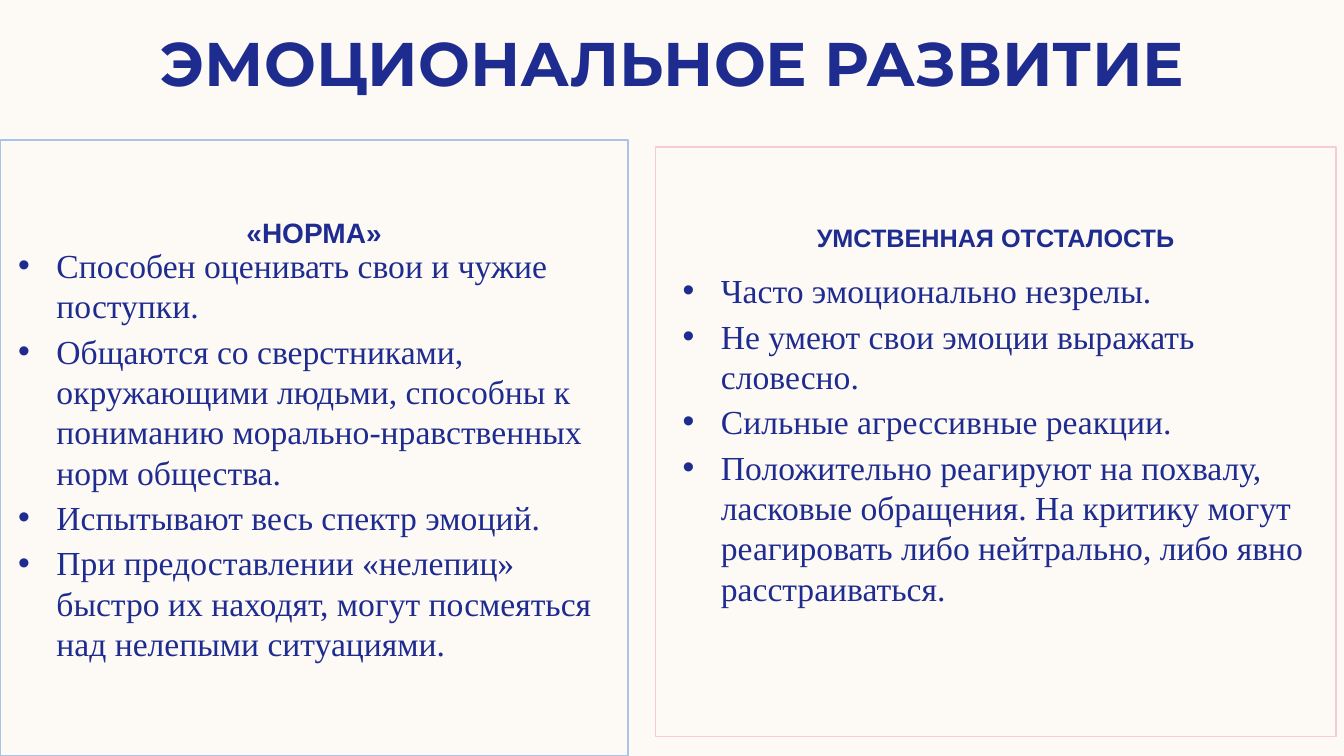
from dataclasses import dataclass

from lxml.etree import SubElement
from pptx import Presentation
from pptx.dml.color import RGBColor
from pptx.enum.text import MSO_ANCHOR as Anchor, MSO_AUTO_SIZE as AutoSize, PP_ALIGN as Align
from pptx.oxml.ns import qn
from pptx.util import Inches, Pt


@dataclass(frozen=True)
class Theme:
    background: RGBColor = RGBColor.from_string("FDFAF6")
    ink: RGBColor = RGBColor.from_string("1F2C8F")
    norm_border: RGBColor = RGBColor.from_string("AAC3E8")
    delay_border: RGBColor = RGBColor.from_string("F5CDCE")
    title_font: str = "Montserrat"
    heading_font: str = "Arial"
    list_font: str = "Times New Roman"
    title_size: int = 44
    norm_size: int = 20
    delay_size: int = 18
    list_size: int = 24


THEME = Theme()

NORM = [
    "Способен оценивать свои и чужие поступки.",
    "Общаются со сверстниками, окружающими людьми, способны к пониманию морально-нравственных норм общества.",
    "Испытывают весь спектр эмоций.",
    "При предоставлении «нелепиц» быстро их находят, могут посмеяться над нелепыми ситуациями.",
]
DELAY = [
    "Часто эмоционально незрелы.",
    "Не умеют свои эмоции выражать словесно.",
    "Сильные агрессивные реакции.",
    "Положительно реагируют на похвалу, ласковые обращения. На критику могут реагировать либо нейтрально, либо явно расстраиваться.",
]


def place(holder, box, anchor=Anchor.TOP):
    holder.left, holder.top, holder.width, holder.height = map(Inches, box)
    frame = holder.text_frame
    frame.word_wrap = True
    frame.auto_size = AutoSize.NONE
    frame.vertical_anchor = anchor
    return frame


def style(paragraph, family, size, bold=False):
    font = paragraph.font
    font.name, font.size, font.bold = family, Pt(size), bold
    font.color.rgb = THEME.ink


def fill_title(holder, text, box):
    frame = place(holder, box, Anchor.MIDDLE)
    frame.text = text
    heading = frame.paragraphs[0]
    heading.alignment = Align.CENTER
    style(heading, THEME.title_font, THEME.title_size, True)


def fill_panel(holder, text, box, border, size):
    frame = place(holder, box)
    frame.margin_top = Inches(0.75)
    frame.text = text
    heading = frame.paragraphs[0]
    heading.alignment = Align.CENTER
    heading.space_before = Pt(0)
    style(heading, THEME.heading_font, size, True)
    holder.line.color.rgb = border
    holder.line.width = Pt(1)


def add_bullet(paragraph):
    properties = paragraph._p.get_or_add_pPr()
    properties.set("marL", str(Inches(0.38)))
    properties.set("indent", str(-Inches(0.38)))
    SubElement(properties, qn("a:buFont"), typeface="Arial")
    SubElement(properties, qn("a:buChar"), char="•")


def fill_list(holder, items, box):
    frame = place(holder, box)
    frame.text = "\n".join(items)
    for item in frame.paragraphs:
        item.space_before = Pt(3.6)
        add_bullet(item)
        style(item, THEME.list_font, THEME.list_size)


def main():
    deck = Presentation()
    deck.slide_width, deck.slide_height = Inches(13.33), Inches(7.5)
    slide = deck.slides.add_slide(deck.slide_layouts[4])
    slide.background.fill.solid()
    slide.background.fill.fore_color.rgb = THEME.background
    title, norm_panel, norm_list, delay_panel, delay_list = slide.placeholders

    fill_title(title, "ЭМОЦИОНАЛЬНОЕ РАЗВИТИЕ", (0.84, 0.19, 11.67, 0.84))
    fill_panel(norm_panel, "«НОРМА»", (0, 1.39, 6.23, 6.11), THEME.norm_border, THEME.norm_size)
    fill_list(norm_list, NORM, (0.08, 2.38, 5.9, 4.93))
    fill_panel(delay_panel, "УМСТВЕННАЯ ОТСТАЛОСТЬ", (6.5, 1.46, 6.75, 5.85), THEME.delay_border, THEME.delay_size)
    fill_list(delay_list, DELAY, (6.67, 2.63, 6.59, 4.55))

    deck.save("out.pptx")


if __name__ == "__main__":
    main()
